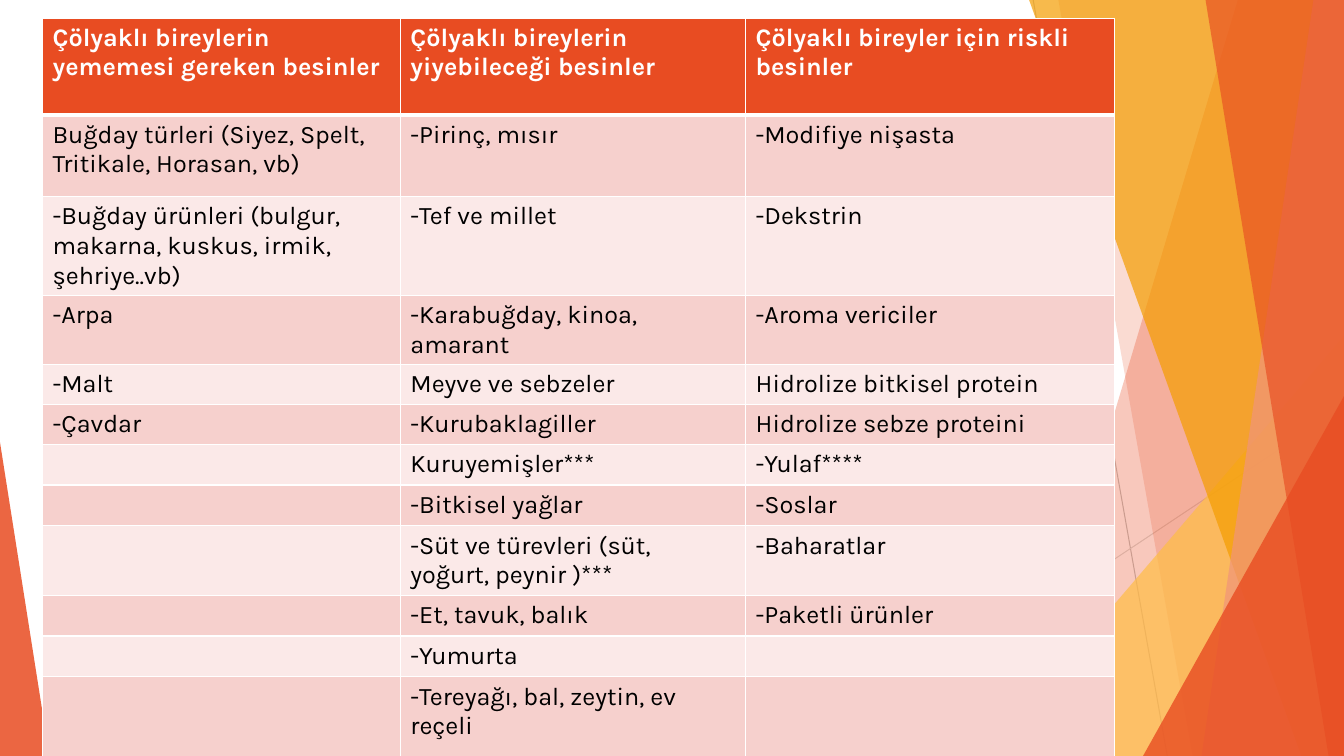
from pptx import Presentation
from pptx.dml.color import RGBColor
from pptx.enum.shapes import MSO_CONNECTOR, MSO_SHAPE
from pptx.oxml.ns import qn
from pptx.util import Pt
from lxml import etree

STRAIGHT = MSO_CONNECTOR.STRAIGHT
TRIANGLE = MSO_SHAPE.ISOSCELES_TRIANGLE

ORANGE_RED = RGBColor(0xE8, 0x4C, 0x22)
AMBER = RGBColor(0xF4, 0x9D, 0x00)
LIGHT_AMBER = RGBColor(0xFF, 0xBD, 0x47)
SALMON = RGBColor(0xF1, 0x94, 0x7A)
GREY = RGBColor(0xBF, 0xBF, 0xBF)
LIGHT_GREY = RGBColor(0xD9, 0xD9, 0xD9)
PINK = RGBColor(0xF6, 0xD0, 0xCD)
PALE_PINK = RGBColor(0xFB, 0xE9, 0xE8)
WHITE = RGBColor(0xFF, 0xFF, 0xFF)
BLACK = RGBColor(0x00, 0x00, 0x00)

FONT = "Karla"
LINE_ROW = 28.3
COLUMN_WIDTHS = [255.6, 246.6, 263.7]
FOOD_ROWS = [
    (69, ["Çölyaklı bireylerin yememesi gereken besinler",
          "Çölyaklı bireylerin yiyebileceği besinler",
          "Çölyaklı bireyler için riskli besinler"]),
    (58.5, ["Buğday türleri (Siyez, Spelt, Tritikale, Horasan, vb)",
            "-Pirinç, mısır", "-Modifiye nişasta"]),
    (70.5, ["-Buğday ürünleri (bulgur, makarna, kuskus, irmik, şehriye..vb)",
            "-Tef ve millet", "-Dekstrin"]),
    (49.4, ["-Arpa", "-Karabuğday, kinoa, amarant", "-Aroma vericiler"]),
    (LINE_ROW, ["-Malt", "Meyve ve sebzeler", "Hidrolize bitkisel protein"]),
    (LINE_ROW, ["-Çavdar", "-Kurubaklagiller", "Hidrolize sebze proteini"]),
    (LINE_ROW, ["", "Kuruyemişler***", "-Yulaf****"]),
    (LINE_ROW, ["", "-Bitkisel yağlar", "-Soslar"]),
    (49.4, ["", "-Süt ve türevleri (süt, yoğurt, peynir )***", "-Baharatlar"]),
    (LINE_ROW, ["", "-Et, tavuk, balık", "-Paketli ürünler"]),
    (LINE_ROW, ["", "-Yumurta", ""]),
    (69, ["", "-Tereyağı, bal, zeytin, ev reçeli", ""]),
]


def paint(shape, color, opacity):
    shape.shadow.inherit = False
    shape.fill.solid()
    shape.fill.fore_color.rgb = color
    shape.line.fill.background()
    color_element = shape._element.spPr.find(qn("a:solidFill"))[0]
    etree.SubElement(color_element, qn("a:alpha"), val=str(opacity * 1000))


def add_thin_line(slide, start, end, color):
    connector = slide.shapes.add_connector(
        STRAIGHT, Pt(start[0]), Pt(start[1]), Pt(end[0]), Pt(end[1]))
    connector.line.color.rgb = color
    connector.line.width = Pt(0.75)
    etree.SubElement(connector._element.spPr, qn("a:effectLst"))


def add_wedge(slide, left, top, width, height, apex, color, opacity):
    wedge = slide.shapes.add_shape(
        TRIANGLE, Pt(left), Pt(top), Pt(width), Pt(height))
    wedge.adjustments[0] = apex
    paint(wedge, color, opacity)


def add_right_facets(slide, left, top, width, height):
    right, bottom = left + width, top + height

    def add_facet(top_offset, bottom_offset, color, opacity):
        corners = [(left + top_offset, top), (right, top),
                   (right, bottom), (left + bottom_offset, bottom)]
        points = [(Pt(x), Pt(y)) for x, y in corners]
        builder = slide.shapes.build_freeform(*points[0])
        builder.add_line_segments(points[1:], close=True)
        paint(builder.convert_to_shape(), color, opacity)

    def add_corner(offset, drop, color, opacity):
        add_wedge(slide, left + offset, top + drop, width - offset,
                  height - drop, 1, color, opacity)

    add_thin_line(slide, (left + 153, top), (left + 248.8, bottom), GREY)
    add_thin_line(slide, (right, top + 290.2), (left, bottom), LIGHT_GREY)
    add_facet(299.2, 137.9, ORANGE_RED, 30)
    add_facet(171, 266.8, ORANGE_RED, 20)
    add_corner(118.4, 239.8, LIGHT_AMBER, 72)
    add_facet(150.1, 344.5, AMBER, 70)
    add_facet(353.2, 273.2, SALMON, 70)
    add_facet(276.1, 364, ORANGE_RED, 65)
    add_corner(231.5, 283, ORANGE_RED, 80)


def add_border(cell, side, width):
    line = etree.SubElement(cell._tc.get_or_add_tcPr(), qn("a:ln" + side),
                            w=str(Pt(width)))
    fill = etree.SubElement(line, qn("a:solidFill"))
    etree.SubElement(fill, qn("a:srgbClr"), val=str(WHITE))


def fill_cell(cell, text, row_index):
    is_header = row_index == 0
    add_border(cell, "L", 1)
    add_border(cell, "R", 1)
    add_border(cell, "T", 3 if row_index == 1 else 1)
    add_border(cell, "B", 3 if is_header else 1)
    cell.fill.solid()
    if is_header:
        cell.fill.fore_color.rgb = ORANGE_RED
    else:
        cell.fill.fore_color.rgb = PINK if row_index % 2 else PALE_PINK
    if text:
        run = cell.text_frame.paragraphs[0].add_run()
        run.text = text
        run.font.name = FONT
        run.font.size = Pt(18)
        run.font.bold = is_header
        run.font.color.rgb = WHITE if is_header else BLACK


def add_food_table(slide, left, top, width, height):
    table = slide.shapes.add_table(
        len(FOOD_ROWS), len(COLUMN_WIDTHS),
        Pt(left), Pt(top), Pt(width), Pt(height)).table
    for column, column_width in zip(table.columns, COLUMN_WIDTHS):
        column.width = Pt(column_width)
    for row_index, (row_height, texts) in enumerate(FOOD_ROWS):
        table.rows[row_index].height = Pt(row_height)
        for column_index, text in enumerate(texts):
            fill_cell(table.cell(row_index, column_index), text, row_index)


def main():
    presentation = Presentation()
    presentation.slide_width = Pt(960)
    presentation.slide_height = Pt(540)
    slide = presentation.slides.add_slide(presentation.slide_layouts[6])
    add_right_facets(slide, 585, 0, 375, 540)
    add_wedge(slide, 0, 316, 35.3, 224, 0, ORANGE_RED, 85)
    add_food_table(slide, 30.4, 13, sum(COLUMN_WIDTHS),
                   sum(row_height for row_height, _ in FOOD_ROWS))
    presentation.save("out.pptx")


if __name__ == "__main__":
    main()
